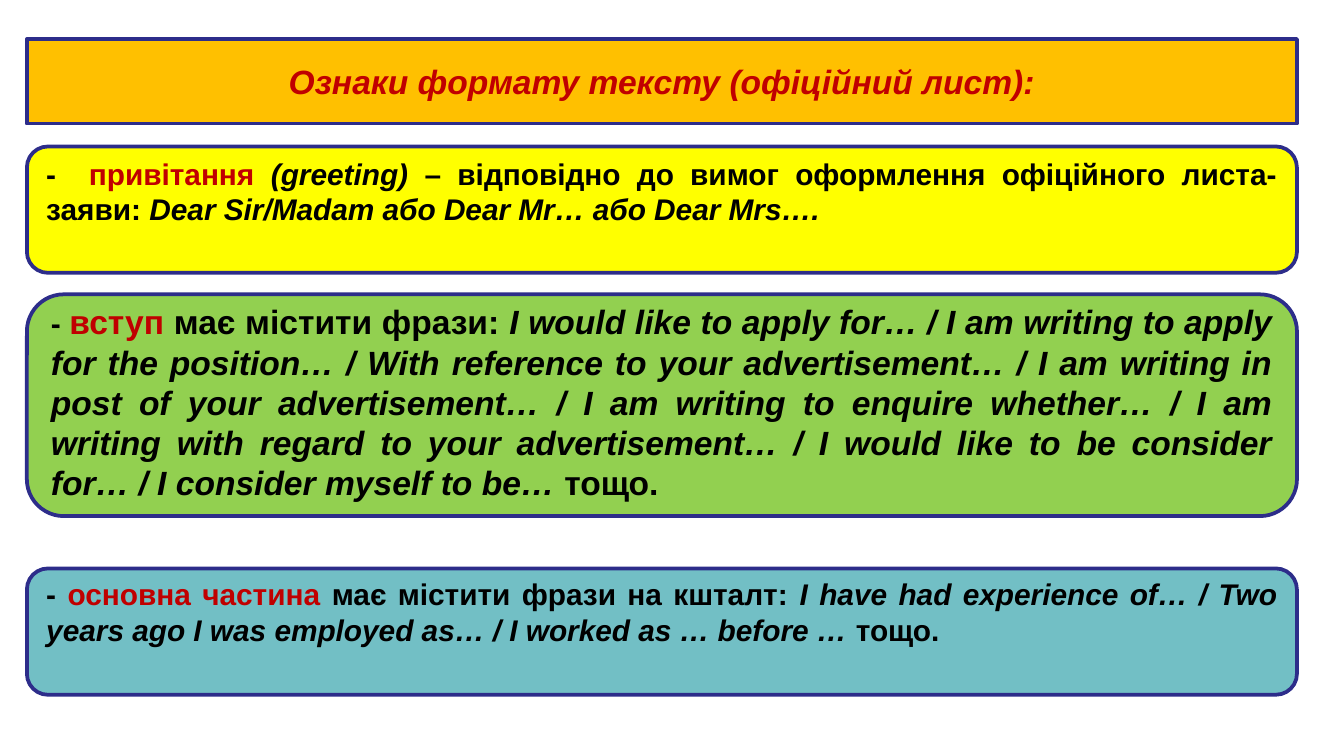
from pptx import Presentation
from pptx.dml.color import RGBColor
from pptx.enum.shapes import MSO_SHAPE
from pptx.enum.text import MSO_ANCHOR, MSO_AUTO_SIZE, PP_ALIGN
from pptx.util import Inches, Pt

COLS = 1000
WIDE = Inches(10)
HIGH = WIDE * 9 // 16
CELL = WIDE // COLS
LEFT, SPAN = 20, 945

NAVY = RGBColor(0x2D, 0x2D, 0x8A)
RED = RGBColor(0xC0, 0x00, 0x00)
BLACK = RGBColor(0x00, 0x00, 0x00)
WHITE = RGBColor(0xFF, 0xFF, 0xFF)
ORANGE = RGBColor(0xFF, 0xC0, 0x00)
YELLOW = RGBColor(0xFF, 0xFF, 0x00)
GREEN = RGBColor(0x92, 0xD0, 0x50)
TEAL = RGBColor(0x72, 0xBF, 0xC5)

HEAD = "Ознаки формату тексту (офіційний лист):"
GREET = [
    ("-  ", {}),
    ("привітання ", {"color": RED}),
    ("(greeting) ", {"italic": True}),
    ("– відповідно до вимог оформлення офіційного листа-заяви: ", {}),
    ("Dear Sir/Madam або Dear Mr… або Dear Mrs….", {"italic": True}),
]
INTRO = [
    ("- ", {"size": 16}),
    ("вступ", {"color": RED}),
    (" має містити фрази: ", {}),
    ("I would like to apply for… / I am writing to apply for the position… / "
     "With reference to your advertisement… / I am writing in post of your "
     "advertisement… / I am writing to enquire whether… / I am writing with "
     "regard to your advertisement… / I would like to be consider for… / "
     "I consider myself to be… ", {"italic": True}),
    ("тощо.", {}),
]
MAIN = [
    ("- ", {}),
    ("основна частина", {"color": RED}),
    (" має містити фрази на кшталт: ", {}),
    ("I have had experience of… / Two years ago I was employed as… / "
     "I worked as … before … ", {"italic": True}),
    ("тощо.", {}),
]
TOP, MIDDLE = MSO_ANCHOR.TOP, MSO_ANCHOR.MIDDLE
CARDS = [
    ((LEFT, 219, SPAN, 165), GREEN, INTRO, 18, MIDDLE, (0, 5)),
    ((LEFT, 109, SPAN, 94), YELLOW, GREET, 16, TOP, (2, 2)),
    ((LEFT, 423, SPAN, 94), TEAL, MAIN, 16, TOP, (1, 1)),
]


def place(box):
    return [CELL * part for part in box]


def write(para, text, size=16, color=BLACK, italic=False):
    run = para.add_run()
    run.text = text
    font = run.font
    font.name, font.size, font.bold = "Arial", Pt(size), True
    font.italic = italic
    font.color.rgb = color


def paint(shape, fill):
    shape.fill.solid()
    shape.fill.fore_color.rgb = fill
    shape.line.color.rgb = NAVY
    shape.line.width = Pt(2)


def banner(slide, box, text):
    title = slide.shapes.title
    title.left, title.top, title.width, title.height = place(box)
    paint(title, ORANGE)
    frame = title.text_frame
    frame.auto_size = MSO_AUTO_SIZE.NONE
    frame.vertical_anchor = MIDDLE
    para = frame.paragraphs[0]
    para.alignment = PP_ALIGN.CENTER
    write(para, text, size=18, color=RED, italic=True)


def card(slide, box, fill, parts, size, anchor, inset):
    shape = slide.shapes.add_shape(MSO_SHAPE.ROUNDED_RECTANGLE, *place(box))
    shape.shadow.inherit = False
    paint(shape, fill)
    frame = shape.text_frame
    frame.word_wrap = True
    frame.vertical_anchor = anchor
    frame.margin_top, frame.margin_bottom = place(inset)
    para = frame.paragraphs[0]
    para.alignment = PP_ALIGN.JUSTIFY
    for text, style in parts:
        write(para, text, **{"size": size, **style})


def main():
    deck = Presentation()
    deck.slide_width, deck.slide_height = WIDE, HIGH
    slide = deck.slides.add_slide(deck.slide_layouts[5])
    slide.background.fill.solid()
    slide.background.fill.fore_color.rgb = WHITE
    banner(slide, (LEFT, 29, SPAN, 63), HEAD)
    for item in CARDS:
        card(slide, *item)
    deck.save("out.pptx")


if __name__ == "__main__":
    main()
